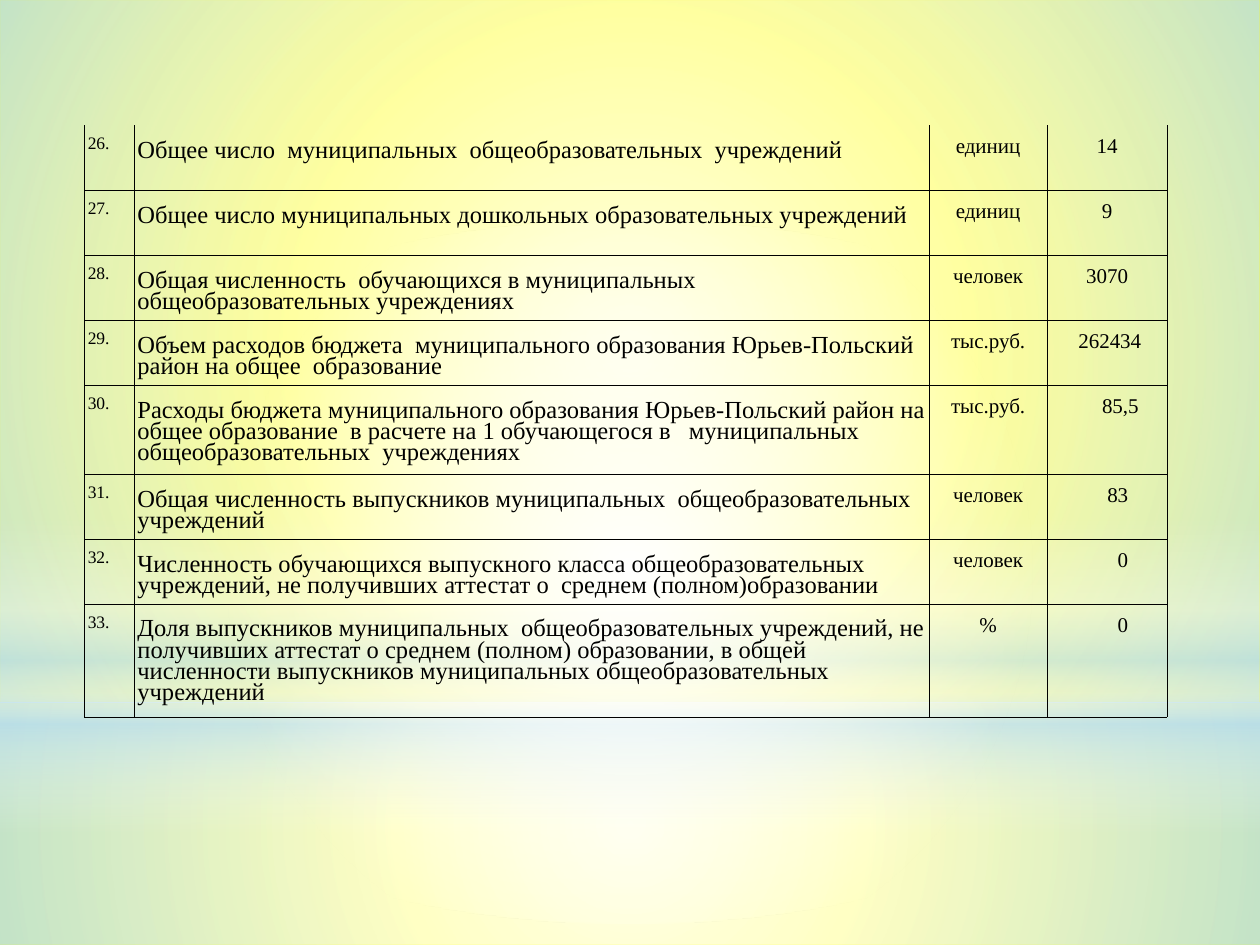
"""Build a slide with a table of municipal education indicators."""
from lxml import etree
from pptx import Presentation
from pptx.dml.color import RGBColor
from pptx.enum.shapes import MSO_SHAPE
from pptx.enum.text import PP_ALIGN
from pptx.oxml.ns import qn
from pptx.util import Cm, Pt

RECTANGLE, OVAL = MSO_SHAPE.RECTANGLE, MSO_SHAPE.OVAL
LEFT, CENTER = PP_ALIGN.LEFT, PP_ALIGN.CENTER
YELLOW = RGBColor(0xFF, 0xFF, 0x00)
WHITE = RGBColor(0xFF, 0xFF, 0xFF)
SKY = RGBColor(0xB4, 0xDC, 0xFA)
BLACK = RGBColor(0x00, 0x00, 0x00)

SIDE_MARGIN = 0.07
SPACE_WIDTH = 0.106


def add_color(parent, color, alpha=100):
    tint = etree.SubElement(parent, qn("a:srgbClr"), val=str(color))
    etree.SubElement(tint, qn("a:alpha"), val=str(alpha * 1000))


def add_glow(shapes, kind, box, stops, radial):
    glow = shapes.add_shape(kind, *[Cm(length) for length in box])
    glow.shadow.inherit = False
    glow.line.fill.background()
    glow.fill.background()
    properties = glow.element.spPr
    gradient = etree.Element(qn("a:gradFill"), rotWithShape="1")
    stop_list = etree.SubElement(gradient, qn("a:gsLst"))
    for position, color, alpha in stops:
        stop = etree.SubElement(stop_list, qn("a:gs"), pos=str(position * 1000))
        add_color(stop, color, alpha)
    if radial:
        center = etree.SubElement(gradient, qn("a:path"), path="circle")
        etree.SubElement(center, qn("a:fillToRect"), l="50000", t="50000", r="50000", b="50000")
    else:
        etree.SubElement(gradient, qn("a:lin"), ang="5400000", scaled="0")
    properties.replace(properties.find(qn("a:noFill")), gradient)


presentation = Presentation()
presentation.slide_width, presentation.slide_height = Cm(25.4), Cm(19.05)
slide = presentation.slides.add_slide(presentation.slide_layouts[6])
slide.background.fill.solid()
slide.background.fill.fore_color.rgb = YELLOW

GLOWS = [
    (RECTANGLE, (0, 14.17, 25.4, 4.88), [(0, WHITE, 91), (37, WHITE, 76), (100, SKY, 79)], True),
    (RECTANGLE, (0, 0, 25.4, 14.17), [(0, WHITE, 89), (48, WHITE, 62), (100, SKY, 79)], True),
    (RECTANGLE, (0, 10.46, 25.4, 6.35),
     [(0, WHITE, 0), (29, WHITE, 30), (45, SKY, 40), (55, WHITE, 26), (65, SKY, 60),
      (100, WHITE, 0)], False),
    (OVAL, (0, 4.45, 25.4, 14.17), [(0, WHITE, 100), (56, WHITE, 0)], True),
]
for glow_values in GLOWS:
    add_glow(slide.shapes, *glow_values)

FIRST_NUMBER = 26
# indicator, unit, value, value shift in spaces, row height
INDICATORS = [
    ("Общее число  муниципальных  общеобразовательных  учреждений", "единиц", "14", 0, 1.31),
    ("Общее число муниципальных дошкольных образовательных учреждений",
     "единиц", "9", 0, 1.31),
    ("Общая численность  обучающихся в муниципальных общеобразовательных учреждениях",
     "человек", "3070", 0, 1.31),
    ("Объем расходов бюджета  муниципального образования Юрьев-Польский район "
     "на общее  образование", "тыс.руб.", "262434", 1, 1.31),
    ("Расходы бюджета муниципального образования Юрьев-Польский район на общее "
     "образование  в расчете на 1 обучающегося в   муниципальных "
     "общеобразовательных  учреждениях", "тыс.руб.", "85,5", 5, 1.79),
    ("Общая численность выпускников муниципальных  общеобразовательных учреждений",
     "человек", "83", 4, 1.31),
    ("Численность обучающихся выпускного класса общеобразовательных\n"
     "учреждений, не получивших аттестат о  среднем (полном)образовании",
     "человек", "0", 6, 1.31),
    ("Доля выпускников муниципальных  общеобразовательных учреждений, не получивших "
     "аттестат о среднем (полном) образовании, в общей численности выпускников "
     "муниципальных общеобразовательных учреждений", "%", "0", 6, 2.28),
]
COLUMNS = [
    {"width": 1.0, "size": 10, "top": 0.25, "alignment": LEFT},
    {"width": 16.03, "size": 14, "top": 0.33, "alignment": LEFT},
    {"width": 2.38, "size": 12, "top": 0.28, "alignment": CENTER},
    {"width": 2.42, "size": 12, "top": 0.28, "alignment": CENTER},
]

table_width = sum(column["width"] for column in COLUMNS)
table_height = sum(indicator[-1] for indicator in INDICATORS)
indicator_table = slide.shapes.add_table(
    len(INDICATORS), len(COLUMNS), Cm(1.7), Cm(2.52), Cm(table_width), Cm(table_height)).table
indicator_table.first_row = indicator_table.horz_banding = False
for index, column in enumerate(COLUMNS):
    indicator_table.columns[index].width = Cm(column["width"])

for row, (indicator, unit, value, shift, height) in enumerate(INDICATORS):
    indicator_table.rows[row].height = Cm(height)
    entries = (f"{FIRST_NUMBER + row}.", indicator, unit, value)
    for index, (entry, column) in enumerate(zip(entries, COLUMNS)):
        cell = indicator_table.cell(row, index)
        cell.text = entry
        indent = shift * SPACE_WIDTH if entry is value else 0
        cell_format = {
            "margin_left": Cm(SIDE_MARGIN + indent),
            "margin_right": Cm(SIDE_MARGIN),
            "margin_top": Cm(column["top"]),
            "margin_bottom": Cm(0),
        }
        for name, setting in cell_format.items():
            setattr(cell, name, setting)
        for paragraph in cell.text_frame.paragraphs:
            paragraph.alignment = column["alignment"]
            paragraph.line_spacing = 0.78
            font = paragraph.runs[0].font
            for name, setting in {"name": "Times New Roman", "size": Pt(column["size"])}.items():
                setattr(font, name, setting)
            font.color.rgb = BLACK
        cell_properties = cell._tc.get_or_add_tcPr()
        for side in "LRTB":
            border = etree.SubElement(cell_properties, qn(f"a:ln{side}"), w=str(Pt(0.06)))
            if side == "T" and row == 0:
                etree.SubElement(border, qn("a:noFill"))
            else:
                add_color(etree.SubElement(border, qn("a:solidFill")), BLACK)
        cell.fill.background()

presentation.save("out.pptx")
